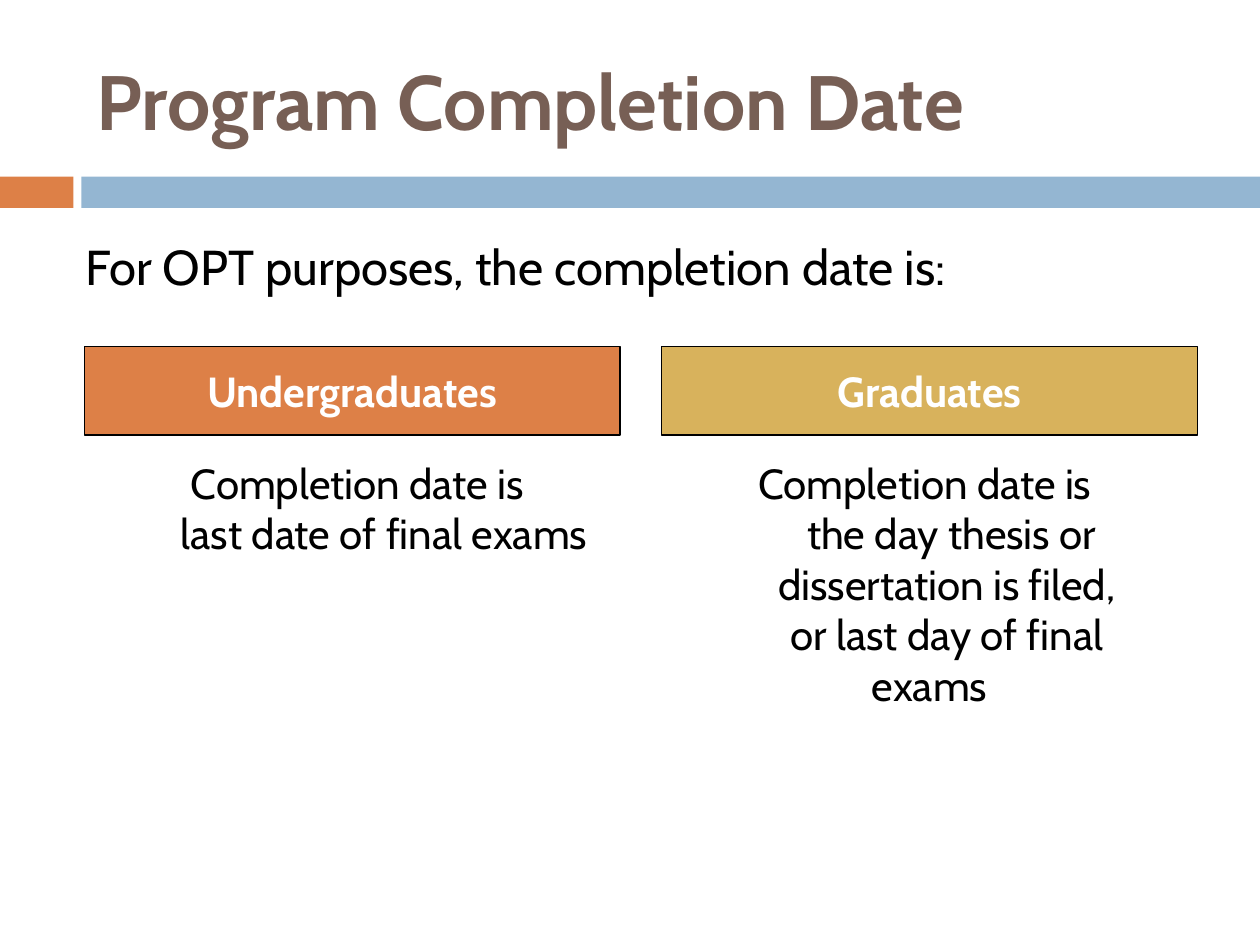
from dataclasses import dataclass

from pptx import Presentation
from pptx.dml.color import RGBColor
from pptx.enum.shapes import MSO_SHAPE as Shape
from pptx.enum.text import MSO_ANCHOR as Anchor, MSO_AUTO_SIZE as AutoSize, PP_ALIGN as Align
from pptx.util import Cm, Pt

FONT = "Cabin"
ORANGE, BLUE, GOLD = "DD8047", "94B6D2", "D8B25C"
BROWN, BLACK, WHITE = "775F55", "000000", "FFFFFF"
COLUMN_WIDTH = 10.8
HANGING = Cm(0.89)


@dataclass
class Column:
    heading: str
    fill: str
    heading_left: float
    body_left: float
    paragraphs: list[list[str]]  # lines of each paragraph


COLUMNS = [
    Column("Undergraduates", ORANGE, 1.7, 1.9,
           [["Completion date is ", "last date of final exams"]]),
    Column("Graduates", GOLD, 13.34, 13.34,
           [["Completion date is ", "the day thesis or dissertation is filed, ",
             "or last day of final "], ["exams"]]),
]


def rgb(color: str) -> RGBColor:
    return RGBColor.from_string(color)


def add_run(p, text: str, size: int, color: str, bold: bool = False) -> None:
    r = p.add_run()
    r.text = text
    r.font.name, r.font.size, r.font.bold = FONT, Pt(size), bold
    r.font.color.rgb = rgb(color)


def add_rect(s, left: float, top: float, width: float, height: float, fill: str):
    sp = s.shapes.add_shape(Shape.RECTANGLE, Cm(left), Cm(top), Cm(width), Cm(height))
    sp.shadow.inherit = False
    sp.fill.solid()
    sp.fill.fore_color.rgb = rgb(fill)
    sp.line.fill.background()
    return sp


def add_text(s, left: float, top: float, width: float, height: float):
    tf = s.shapes.add_textbox(Cm(left), Cm(top), Cm(width), Cm(height)).text_frame
    tf.word_wrap = True
    return tf


def add_column(s, col: Column) -> None:
    tf = add_text(s, col.body_left, 9.1, COLUMN_WIDTH, 9.95)
    for i, lines in enumerate(col.paragraphs):
        p = tf.add_paragraph() if i else tf.paragraphs[0]
        p.alignment = Align.CENTER
        pPr = p._p.get_or_add_pPr()
        pPr.set("marL", str(HANGING))
        pPr.set("indent", str(-HANGING))
        for j, line in enumerate(lines):
            if j:
                p.add_line_break()
            add_run(p, line, 24, BLACK)

    sp = add_rect(s, col.heading_left, 6.99, COLUMN_WIDTH, 1.78, col.fill)
    sp.line.color.rgb = rgb(BLACK)
    sp.line.width = Pt(0.75)
    tf = sp.text_frame
    tf.vertical_anchor = Anchor.MIDDLE
    p = tf.paragraphs[0]
    p.alignment = Align.CENTER
    add_run(p, col.heading, 24, WHITE, bold=True)


def main() -> None:
    prs = Presentation()
    prs.slide_width, prs.slide_height = Cm(25.4), Cm(19.05)
    s = prs.slides.add_slide(prs.slide_layouts[6])

    add_rect(s, 0, 3.56, 1.48, 0.63, ORANGE)
    add_rect(s, 1.64, 3.56, 23.76, 0.63, BLUE)

    title = add_text(s, 1.7, 0.64, 22.66, 2.74)
    title.vertical_anchor = Anchor.MIDDLE
    add_run(title.paragraphs[0], "Program Completion Date", 44, BROWN, bold=True)

    intro = add_text(s, 1.48, 4.65, 19.53, 1.45)
    intro.word_wrap = False
    intro.auto_size = AutoSize.SHAPE_TO_FIT_TEXT
    add_run(intro.paragraphs[0], "For OPT purposes, the completion date is:", 28, BLACK)

    for col in COLUMNS:
        add_column(s, col)
    prs.save("out.pptx")


if __name__ == "__main__":
    main()
